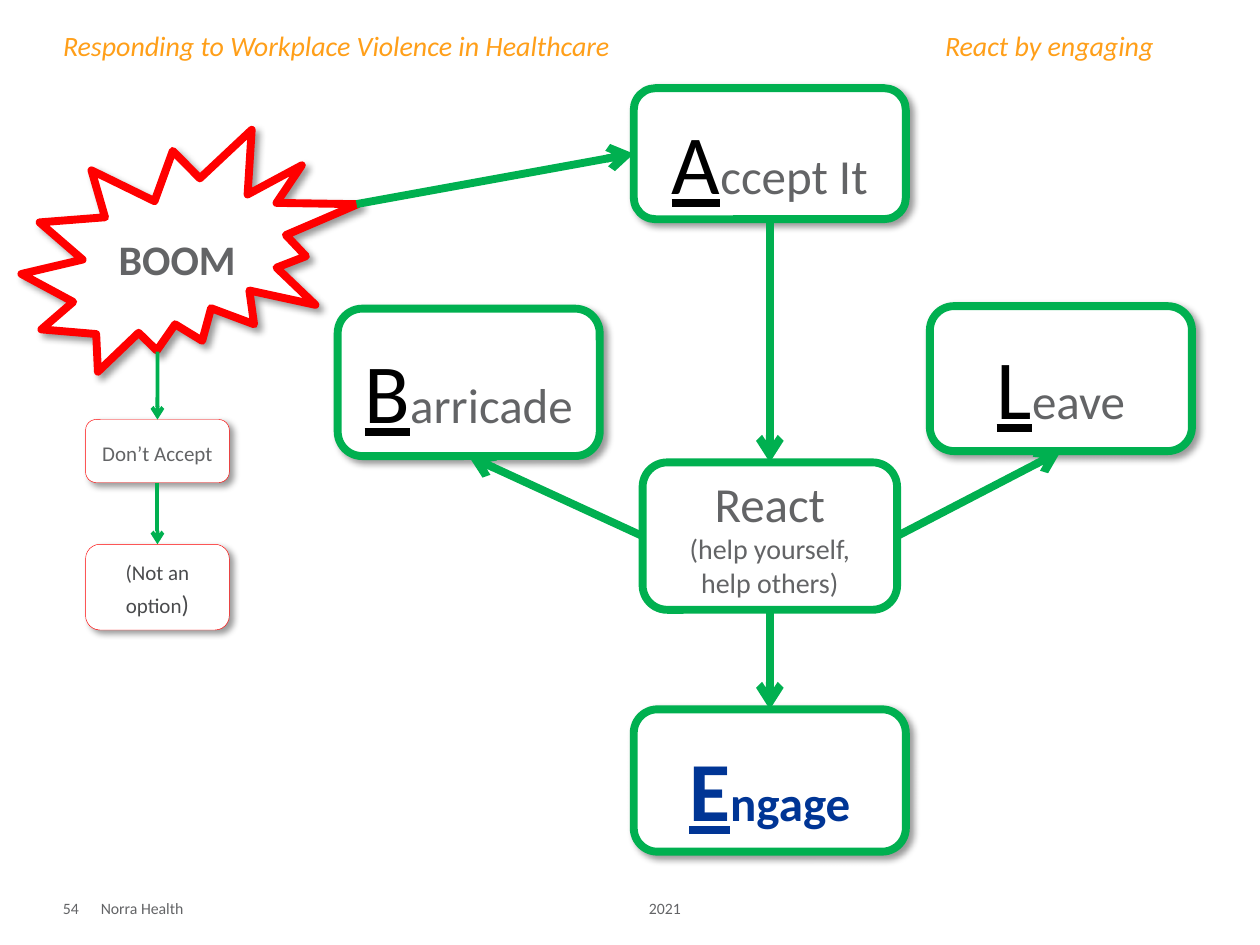
from lxml import etree
from pptx import Presentation
from pptx.dml.color import RGBColor
from pptx.enum.shapes import MSO_CONNECTOR, MSO_SHAPE
from pptx.enum.text import MSO_ANCHOR, PP_ALIGN
from pptx.oxml import parse_xml
from pptx.oxml.ns import nsdecls, qn
from pptx.util import Inches, Pt

COLORS = {
    "white": "FFFFFF", "black": "000000", "gray": "636466", "dark": "4A4B4D",
    "orange": "FF9F19", "red": "FF0000", "green": "00B050", "blue": "003595",
}
TOP, LEFT, BOTTOM, RIGHT = range(4)
SHADOW = (
    f'<a:effectLst {nsdecls("a")}><a:outerShdw blurRad="50800" dist="38100" '
    'dir="2700000" algn="tl" rotWithShape="0"><a:srgbClr val="000000">'
    '<a:alpha val="40000"/></a:srgbClr></a:outerShdw></a:effectLst>'
)


def rgb(name):
    return RGBColor.from_string(COLORS[name])


def add_run(paragraph, text, size, color="gray", **style):
    """Append a Calibri run; style sets bold, italic or underline."""
    run = paragraph.add_run()
    run.text = text
    run.font.name = "Calibri"
    run.font.size = Pt(size)
    run.font.color.rgb = rgb(color)
    for attribute, value in style.items():
        setattr(run.font, attribute, value)


prs = Presentation()
prs.slide_width, prs.slide_height = Inches(10), Inches(7.5)
slide = prs.slides.add_slide(prs.slide_layouts[5])
shapes = slide.shapes

# Title, with the section name at a tab stop
title = shapes.title
title.left, title.top = Inches(0.5), Inches(0.23)
title.width, title.height = Inches(9), Inches(0.84)
heading = title.text_frame
heading.margin_left = heading.margin_top = heading.margin_right = heading.margin_bottom = 0
heading.vertical_anchor = MSO_ANCHOR.TOP
heading_line = heading.paragraphs[0]
heading_line.alignment = PP_ALIGN.LEFT
tab_list = etree.SubElement(heading_line._p.get_or_add_pPr(), qn("a:tabLst"))
etree.SubElement(tab_list, qn("a:tab"), pos=str(Inches(7)), algn="l")
add_run(heading_line, "Responding to Workplace Violence in Healthcare\tReact by engaging",
        16, "orange", italic=True)

# Steps: position, outline colour and width, then paragraphs of runs
initial = {"color": "black", "underline": True}
steps = {
    "boom": ((0.17, 1.03, 2.67, 1.92), "red", 4.5, [[("BOOM", 24, {"bold": True})]]),
    "accept": ((5.03, 0.7, 2.16, 1.04), "green", 4.5,
               [[("A", 48, initial), ("ccept It", 28, {})]]),
    "refuse": ((0.68, 3.33, 1.14, 0.5), "red", 0.25, [[("Don’t Accept", 12, {})]]),
    "react": ((5.1, 3.67, 2.02, 1.17), "green", 4.5,
              [[("React", 28, {})], [("(help yourself, help others)", 16, {})]]),
    "barricade": ((2.68, 2.45, 2.08, 1.17), "green", 4.5,
                  [[("B", 48, initial), ("arricade", 28, {})]]),
    "leave": ((7.38, 2.43, 2.08, 1.15), "green", 4.5,
              [[("L", 48, initial), ("eave", 28, {})]]),
    "engage": ((5.03, 5.63, 2.16, 1.13), "green", 4.5,
               [[("E", 48, {"color": "blue", "bold": True, "underline": True}),
                 ("ngage", 28, {"color": "blue", "bold": True})]]),
    "no_option": ((0.68, 4.32, 1.14, 0.68), "red", 0.25,
                  [[("(Not an option", 12, {"color": "dark"}), (")", 14, {"color": "dark"})]]),
}
boxes = {}
for step, (place, outline, weight, paragraphs) in steps.items():
    preset = MSO_SHAPE.EXPLOSION2 if step == "boom" else MSO_SHAPE.ROUNDED_RECTANGLE
    box = boxes[step] = shapes.add_shape(preset, *map(Inches, place))
    box.fill.solid()
    box.fill.fore_color.rgb = rgb("white")
    box.line.color.rgb = rgb(outline)
    box.line.width = Pt(weight)
    if step == "react":
        box.shadow.inherit = False
    else:
        box._element.spPr.append(parse_xml(SHADOW))
    frame = box.text_frame
    frame.word_wrap = True
    frame.vertical_anchor = MSO_ANCHOR.MIDDLE
    for index, runs in enumerate(paragraphs):
        paragraph = frame.add_paragraph() if index else frame.paragraphs[0]
        paragraph.alignment = PP_ALIGN.CENTER
        if step != "react":
            paragraph.line_spacing = 1.15
            paragraph.space_after = Pt(10)
        for text, size, style in runs:
            add_run(paragraph, text, size, **style)

# Arrows: the start is a step and side, or a point on the burst
arrows = [
    ((2.83, 1.62), ("accept", LEFT), 4.5),
    ((1.25, 2.79), ("refuse", TOP), 2.25),
    (("refuse", BOTTOM), ("no_option", TOP), 2.25),
    (("accept", BOTTOM), ("react", TOP), 4.5),
    (("react", LEFT), ("barricade", BOTTOM), 4.5),
    (("react", RIGHT), ("leave", BOTTOM), 4.5),
    (("react", BOTTOM), ("engage", TOP), 4.5),
]
for start, (target, target_side), weight in arrows:
    joined = start[0] in boxes
    x, y = (0, 0) if joined else start
    arrow = shapes.add_connector(MSO_CONNECTOR.STRAIGHT, Inches(x), Inches(y),
                                 Inches(x), Inches(y))
    if joined:
        arrow.begin_connect(boxes[start[0]], start[1])
    arrow.end_connect(boxes[target], target_side)
    arrow.line.color.rgb = rgb("green")
    arrow.line.width = Pt(weight)
    etree.SubElement(arrow.line._get_or_add_ln(), qn("a:tailEnd"), type="arrow")
    etree.SubElement(arrow._element.spPr, qn("a:effectLst"))

# Footer
footers = [
    ("2021", (5.15, 7.08, 1.6, 0.2), MSO_ANCHOR.BOTTOM),
    ("Norra Health", (0.8, 7.08, 4, 0.2), MSO_ANCHOR.MIDDLE),
    ("54", (0.5, 6.97, 0.5, 0.31), MSO_ANCHOR.BOTTOM),
]
for text, place, anchor in footers:
    frame = shapes.add_textbox(*map(Inches, place)).text_frame
    frame.word_wrap = True
    frame.margin_left = frame.margin_top = frame.margin_right = frame.margin_bottom = 0
    if anchor == MSO_ANCHOR.MIDDLE:
        frame.margin_top = Inches(0.05)
    frame.vertical_anchor = anchor
    add_run(frame.paragraphs[0], text, 9)

prs.save("out.pptx")
